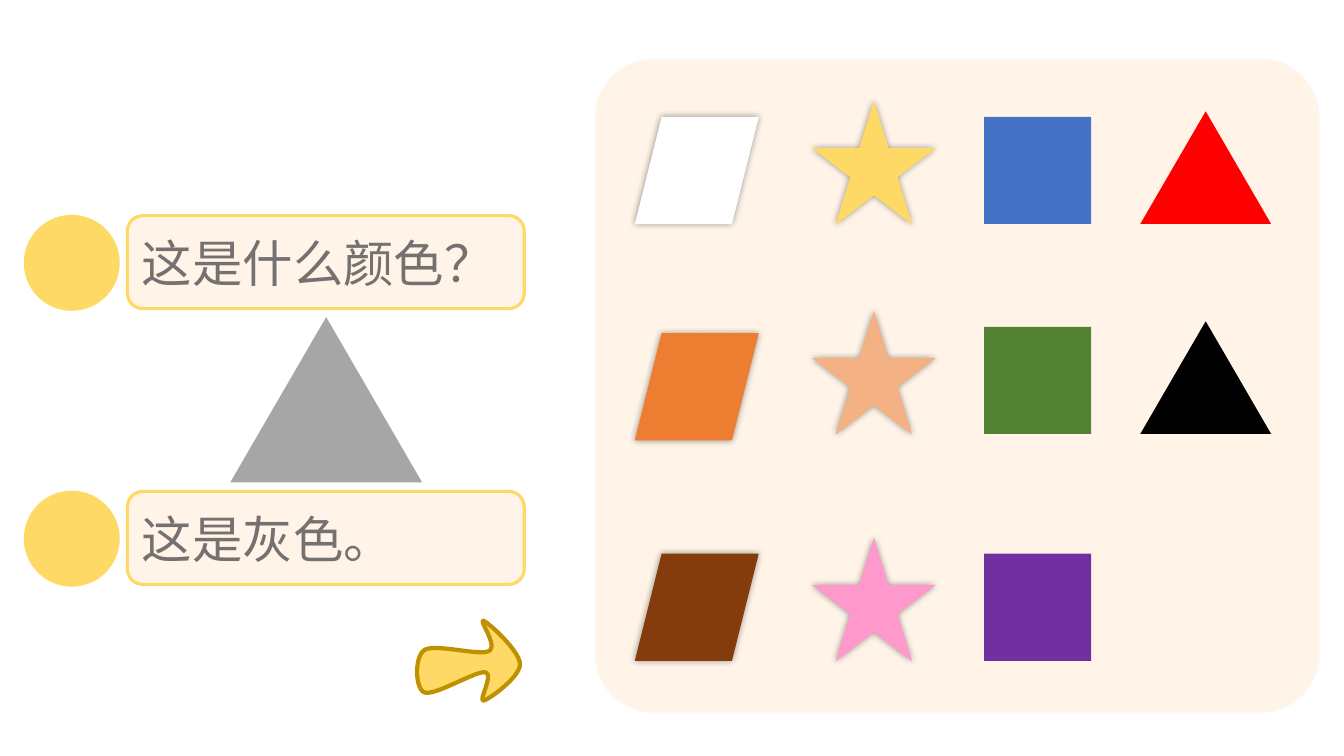
import pptx
import pptx.util
import pptx.dml.color
import pptx.enum.shapes
import pptx.enum.text
import pptx.oxml
import pptx.oxml.ns

Pt = pptx.util.Pt
SHAPE = pptx.enum.shapes.MSO_SHAPE
FONT = "Noto Sans CJK SC"
CREAM, YELLOW, GREY_TEXT = "FFF4E7", "FFD966", "767171"

# Columns of the colour board: shape, left, width, height, shadow
COLUMNS = [
    (SHAPE.PARALLELOGRAM, 453.5, 88.5, 76.5, True),
    (SHAPE.REGULAR_PENTAGON, 580, 88.5, 88.5, True),
    (SHAPE.RECTANGLE, 703, 76.5, 76.5, False),
    (SHAPE.ISOSCELES_TRIANGLE, 814.5, 93.5, 80.5, False),
]
COLUMNS[1] = (SHAPE.STAR_5_POINT,) + COLUMNS[1][1:]

# Rows of the colour board: baseline of each column, fill of each column
ROWS = [
    ((160, 160.5, 160, 160), ("FFFFFF", YELLOW, "4472C4", "FF0000")),
    ((314.5, 310.5, 310, 310), ("ED7D31", "F4B183", "548235", "000000")),
    ((472, 472.5, 472, 472), ("843C0C", "FF99CC", "7030A0")),
]

# Arrow outline: start, then two control points and an end per curve
ARROW_START = (303.1, 464.4)
ARROW_CURVES = [
    ((295.9, 469.4), (296.6, 491.8), (303.1, 494.6)),
    ((310.3, 497.5), (339.1, 479.5), (346.3, 480.2)),
    ((353.5, 481), (341.3, 501.1), (345.6, 500.4)),
    ((349.2, 499.7), (371.5, 483.8), (371.5, 474.5)),
    ((371.5, 465.1), (349.2, 445), (345.6, 443.5)),
    ((341.3, 442.1), (356.4, 461.5), (349.2, 465.1)),
    ((342, 468.7), (311, 459.4), ARROW_START),
]


def color(hex_value):
    return pptx.dml.color.RGBColor.from_string(hex_value)


def paint(shape, fill, line=None, width=0):
    shape.shadow.inherit = False
    shape.fill.solid()
    shape.fill.fore_color.rgb = color(fill)
    if line:
        shape.line.color.rgb = color(line)
        shape.line.width = Pt(width)
    else:
        shape.line.fill.background()


def add_figure(slide, kind, left, top, width, height, fill, line=None, line_width=0):
    figure = slide.shapes.add_shape(kind, Pt(left), Pt(top), Pt(width), Pt(height))
    paint(figure, fill, line, line_width)
    return figure


def add_glow_shadow(figure):
    effects = figure._element.spPr.find(pptx.oxml.ns.qn("a:effectLst"))
    effects.append(pptx.oxml.parse_xml(
        f'<a:outerShdw {pptx.oxml.ns.nsdecls("a")} blurRad="{Pt(5)}" dist="0" dir="0" '
        'algn="ctr" rotWithShape="0"><a:srgbClr val="000000">'
        '<a:alpha val="40000"/></a:srgbClr></a:outerShdw>'))


def add_speech(slide, top, sentence):
    # Speaker disc and sentence box
    add_figure(slide, SHAPE.OVAL, 17, top - 0.5, 68.5, 68.5, YELLOW)
    box = add_figure(slide, SHAPE.ROUNDED_RECTANGLE, 91, top, 283.5, 66.5,
                     CREAM, YELLOW, 2.25)
    frame = box.text_frame
    frame.word_wrap = True
    frame.vertical_anchor = pptx.enum.text.MSO_ANCHOR.MIDDLE
    paragraph = frame.paragraphs[0]
    paragraph.alignment = pptx.enum.text.PP_ALIGN.LEFT
    run = paragraph.add_run()
    run.text = sentence
    run.font.size = Pt(36)
    run.font.name = FONT
    run.font.color.rgb = color(GREY_TEXT)
    # Chinese characters take the East Asian font
    run.font._element.find(pptx.oxml.ns.qn("a:latin")).addnext(pptx.oxml.parse_xml(
        f'<a:ea {pptx.oxml.ns.nsdecls("a")} typeface="{FONT}"/>'))


def curve_points(start, control_1, control_2, end, steps=16):
    for step in range(1, steps + 1):
        t = step / steps
        weights = ((1 - t) ** 3, 3 * t * (1 - t) ** 2, 3 * t ** 2 * (1 - t), t ** 3)
        corners = (start, control_1, control_2, end)
        yield tuple(Pt(sum(w * c[axis] for w, c in zip(weights, corners)))
                    for axis in (0, 1))


def add_arrow(slide):
    outline = []
    start = ARROW_START
    for curve in ARROW_CURVES:
        outline.extend(curve_points(start, *curve))
        start = curve[-1]
    builder = slide.shapes.build_freeform(Pt(ARROW_START[0]), Pt(ARROW_START[1]))
    builder.add_line_segments(outline, close=True)
    paint(builder.convert_to_shape(), YELLOW, "BF9000", 3)


def add_color_board(slide):
    board = add_figure(slide, SHAPE.ROUNDED_RECTANGLE, 425, 42, 517.5, 467,
                       CREAM, "FAFAFA", 0.75)
    board.adjustments[0] = 0.09
    for baselines, fills in ROWS:
        for column, baseline, fill in zip(COLUMNS, baselines, fills):
            kind, left, width, height, has_shadow = column
            figure = add_figure(slide, kind, left, baseline - height, width, height, fill)
            if has_shadow:
                add_glow_shadow(figure)


def main():
    deck = pptx.Presentation()
    deck.slide_width, deck.slide_height = Pt(960), Pt(540)
    slide = deck.slides.add_slide(deck.slide_layouts[6])

    add_color_board(slide)

    # Question, the grey triangle and its answer
    add_speech(slide, 154, "这是什么颜色？")
    add_figure(slide, SHAPE.ISOSCELES_TRIANGLE, 164.5, 226.5, 137, 118, "A6A6A6")
    add_speech(slide, 351, "这是灰色。")

    add_arrow(slide)
    deck.save("out.pptx")


if __name__ == "__main__":
    main()
